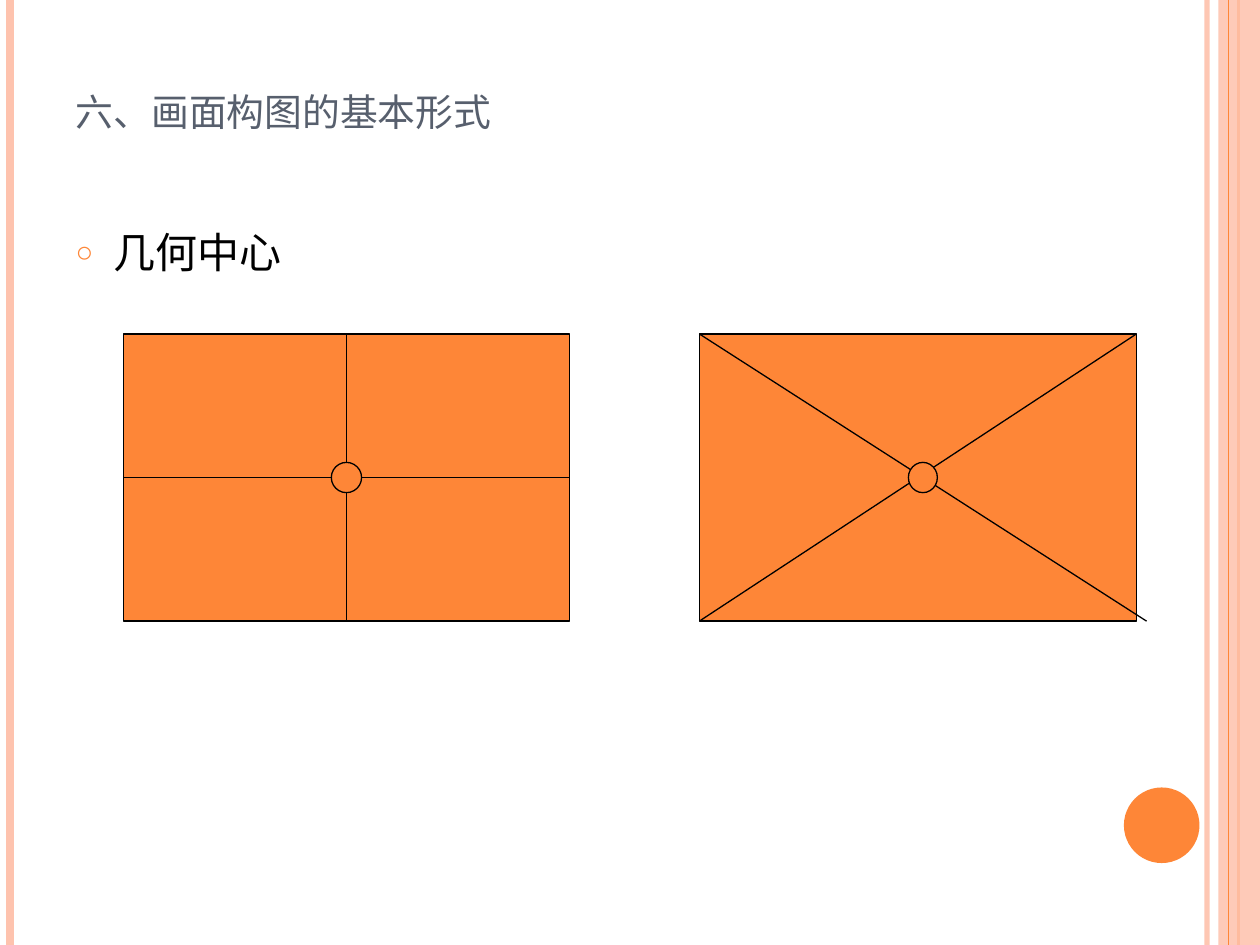
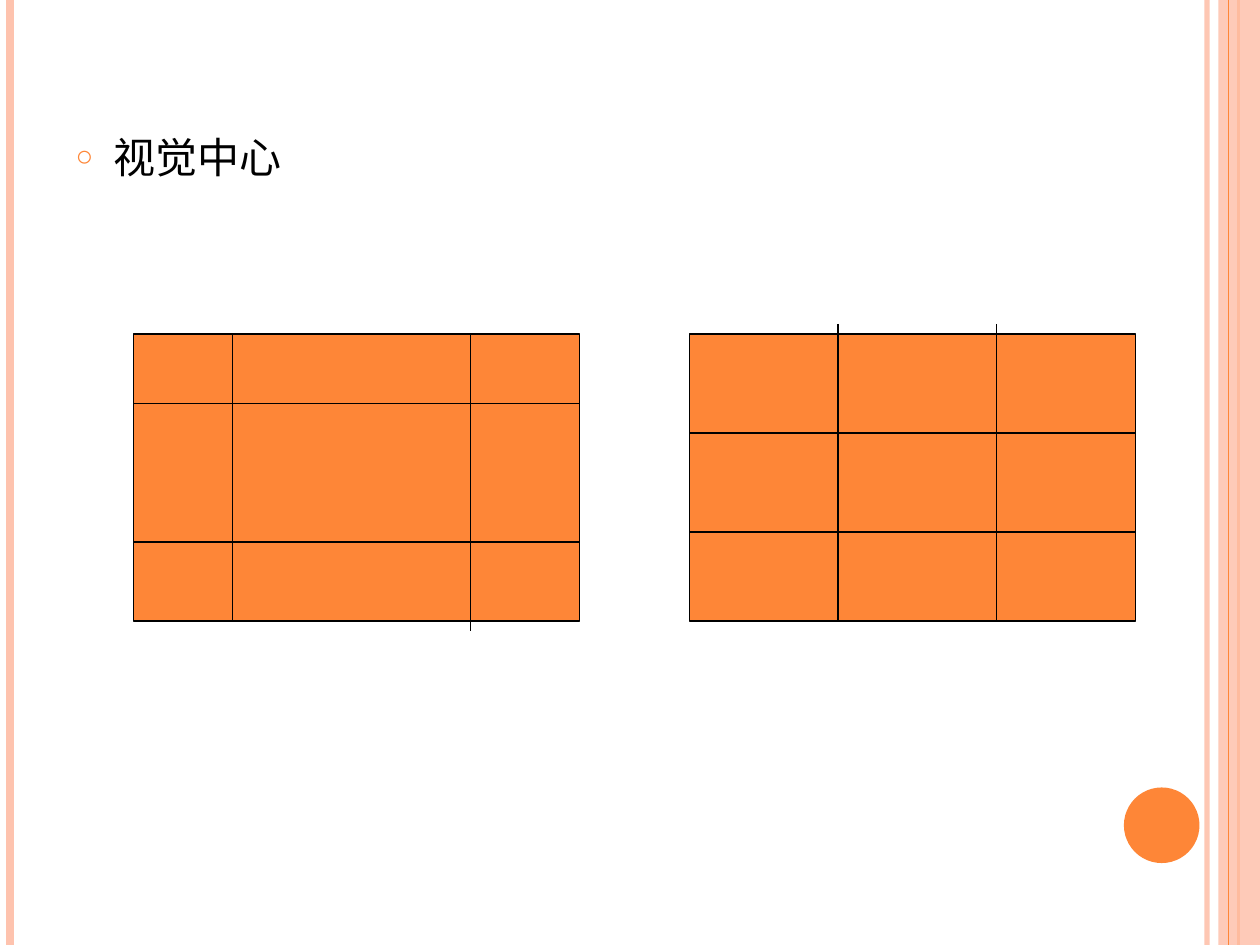
from dataclasses import dataclass
from lxml import etree
from pptx import Presentation
from pptx.dml.color import RGBColor
from pptx.enum.shapes import MSO_CONNECTOR, MSO_SHAPE
from pptx.enum.text import MSO_ANCHOR, MSO_AUTO_SIZE, PP_ALIGN
from pptx.oxml.ns import qn
from pptx.util import Inches, Pt

RECTANGLE, OVAL = MSO_SHAPE.RECTANGLE, MSO_SHAPE.OVAL
STRAIGHT = MSO_CONNECTOR.STRAIGHT
TOP, BOTTOM = MSO_ANCHOR.TOP, MSO_ANCHOR.BOTTOM
NO_FIT = MSO_AUTO_SIZE.NONE
LEFT = PP_ALIGN.LEFT
COLUMNS, ROWS = 10, 7.5
FRAME_TOP, FRAME_WIDTH, FRAME_HEIGHT = 2.65, 3.54, 2.28
OVERSHOOT = 0.08


@dataclass(frozen=True)
class Theme:
    font: str = "TeX Gyre Schola"
    accent: str = "FE8637"
    band: str = "FEC3AE"
    title: str = "575F6D"
    ink: str = "000000"
    title_size: float = 27
    body_size: float = 24
    hairline: float = 0.75


def add_child(parent, tag, **attributes):
    return etree.SubElement(parent, qn(tag), attributes)


def fade(paint, percent):
    for color in paint.iter(qn("a:srgbClr")):
        add_child(color, "a:alpha", val=str(percent * 1000))


def write(box, text, size, color, font, anchor=TOP, small_caps=False, bottom=0.05):
    frame = box.text_frame
    frame.word_wrap = True
    frame.auto_size = NO_FIT
    frame.vertical_anchor = anchor
    frame.margin_bottom = Inches(bottom)
    para = frame.paragraphs[0]
    para.alignment = LEFT
    span = para.add_run()
    span.text = text
    span.font.name = font
    span.font.size = Pt(size)
    span.font.color.rgb = RGBColor.from_string(color)
    if small_caps:
        span.font._element.set("cap", "small")
    return para


class Board:
    def __init__(self, theme):
        self.theme = theme
        self.deck = Presentation()
        self.deck.slide_width, self.deck.slide_height = Inches(10), Inches(7.5)
        self.page = None

    def x(self, columns):
        return round(self.deck.slide_width * columns / COLUMNS)

    def y(self, rows):
        return round(self.deck.slide_height * rows / ROWS)

    def new_page(self):
        self.page = self.deck.slides.add_slide(self.deck.slide_layouts[1])
        theme = self.theme
        self.line(9.58, 0, 9.58, ROWS, theme.band, 3, opacity=93)
        self.line(0.08, 0, 0.08, ROWS, theme.band, 4.5)
        self.line(9.83, 0, 9.83, ROWS, theme.accent, 1.5)
        self.shape(RECTANGLE, 9.67, 0, 0.33, ROWS, theme.band, opacity=87)
        self.line(9.75, 0, 9.75, ROWS, theme.accent)
        self.shape(OVAL, 8.92, 6.25, 0.6, 0.6, theme.accent)

    def place(self, box, left, top, width, height):
        box.left, box.top = self.x(left), self.y(top)
        box.width, box.height = self.x(width), self.y(height)

    def title(self, text):
        box = self.page.shapes.title
        if not text:
            box._element.getparent().remove(box._element)
            return
        self.place(box, 0.5, 0.3, 8.17, 1.25)
        write(box, text, self.theme.title_size, self.theme.title, self.theme.font,
              anchor=BOTTOM, small_caps=True, bottom=0.47)

    def bullet(self, text, top, width, height):
        box = self.page.placeholders[1]
        self.place(box, 0.5, top, width, height)
        para = write(box, text, self.theme.body_size, self.theme.ink, self.theme.font)
        para.space_before = Pt(6)
        properties = para._p.get_or_add_pPr()
        indent = Inches(0.3)
        properties.set("marL", str(indent))
        properties.set("indent", str(-indent))
        color = add_child(properties, "a:buClr")
        add_child(color, "a:srgbClr", val=self.theme.accent)
        add_child(properties, "a:buSzPct", val="70000")
        add_child(properties, "a:buChar", char="○")

    def shape(self, kind, left, top, width, height, fill, outline=None, opacity=100):
        box = self.page.shapes.add_shape(
            kind, self.x(left), self.y(top), self.x(width), self.y(height))
        box.shadow.inherit = False
        box.fill.solid()
        box.fill.fore_color.rgb = RGBColor.from_string(fill)
        if opacity < 100:
            fade(box._element.spPr, opacity)
        if outline:
            box.line.color.rgb = RGBColor.from_string(outline)
            box.line.width = Pt(self.theme.hairline)
        else:
            box.line.fill.background()

    def line(self, x1, y1, x2, y2, color=None, width=None, opacity=100):
        line = self.page.shapes.add_connector(
            STRAIGHT, self.x(x1), self.y(y1), self.x(x2), self.y(y2))
        line.line.color.rgb = RGBColor.from_string(color or self.theme.ink)
        line.line.width = Pt(width or self.theme.hairline)
        if opacity < 100:
            fade(line._element.spPr, opacity)
        add_child(line._element.spPr, "a:effectLst")

    def frame(self, left, width=FRAME_WIDTH):
        self.shape(RECTANGLE, left, FRAME_TOP, width, FRAME_HEIGHT,
                   self.theme.accent, self.theme.ink)

    def center_mark(self, x, width=0.24):
        middle = FRAME_TOP + FRAME_HEIGHT / 2
        self.shape(OVAL, x - width / 2, middle - 0.12, width, 0.24,
                   self.theme.accent, self.theme.ink)

    def upright(self, left, share, above=0, below=0):
        x = left + FRAME_WIDTH * share
        self.line(x, FRAME_TOP - above, x, FRAME_TOP + FRAME_HEIGHT + below)

    def level(self, left, share):
        y = FRAME_TOP + FRAME_HEIGHT * share
        self.line(left, y, left + FRAME_WIDTH, y)


def geometric_center(board):
    board.new_page()
    board.title("六、画面构图的基本形式")
    board.bullet("几何中心", 1.75, 8.17, 5.33)

    cross = 0.98
    board.frame(cross)
    board.upright(cross, 1 / 2)
    board.level(cross, 1 / 2)
    board.center_mark(cross + FRAME_WIDTH / 2)

    diagonal, width = 5.55, 3.47
    bottom = FRAME_TOP + FRAME_HEIGHT
    board.frame(diagonal, width)
    board.line(diagonal, FRAME_TOP, diagonal + width + OVERSHOOT, bottom)
    board.line(diagonal, bottom, diagonal + width, FRAME_TOP)
    board.center_mark(diagonal + (width + OVERSHOOT) / 2, 0.23)


def visual_center(board):
    board.new_page()
    board.title(None)
    board.bullet("视觉中心", 0.99, 9, 5.71)

    wide, thirds = 1.06, 5.47
    board.frame(wide)
    board.frame(thirds)
    board.upright(wide, 10 / 45)
    board.upright(wide, 34 / 45, below=OVERSHOOT)
    for share in (7 / 29, 21 / 29):
        board.level(wide, share)
    for share in (15 / 45, 31 / 45):
        board.upright(thirds, share, above=OVERSHOOT)
    for share in (10 / 29, 20 / 29):
        board.level(thirds, share)


def main():
    board = Board(Theme())
    geometric_center(board)
    visual_center(board)
    board.deck.save("out.pptx")


if __name__ == "__main__":
    main()
